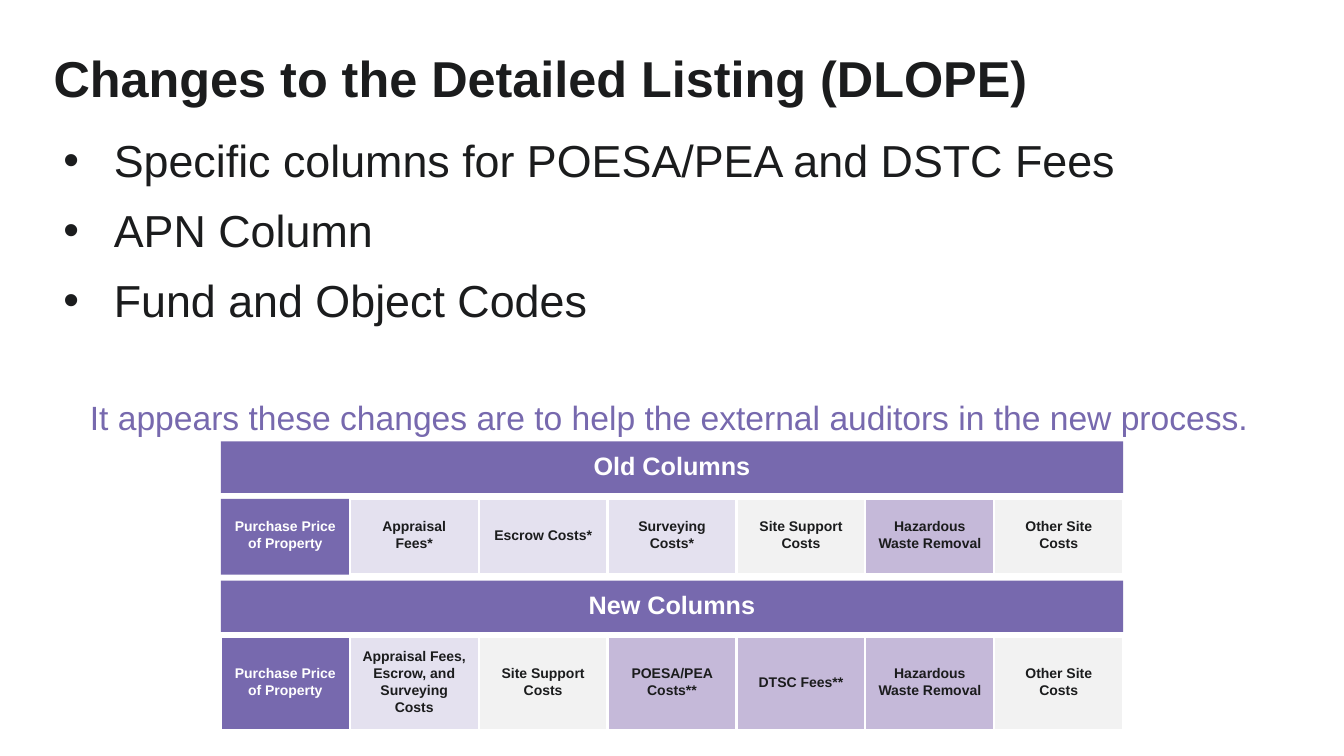
import dataclasses

import pptx
import pptx.dml.color
import pptx.enum.shapes
import pptx.enum.text
import pptx.oxml.ns
import pptx.util
from lxml import etree


@dataclasses.dataclass(frozen=True)
class Theme:
    font: str = "Arial"
    ink: str = "1B1C1D"
    white: str = "FFFFFF"
    purple: str = "7769AE"
    lilac: str = "C5B9D9"
    mist: str = "E4E1EF"
    grey: str = "F2F2F2"
    title_size: int = 36
    bullet_size: int = 32
    remark_size: int = 24
    band_size: int = 18
    cell_size: int = 10


THEME = Theme()
SLIDE_WIDTH = pptx.util.Inches(13.33)
SLIDE_HEIGHT = pptx.util.Inches(7.5)
MARGIN = 3.98
TABLE_LEFT = 16.43
TABLE_WIDTH = 67.14
CELL_INSET_SHARE = 0.1

BULLETS = [
    "Specific columns for POESA/PEA and DSTC Fees",
    "APN Column",
    "Fund and Object Codes",
]
REMARK = "It appears these changes are to help the external auditors in the new process."
OLD_COLUMNS = [
    ("Purchase Price of Property", THEME.purple),
    ("Appraisal Fees*", THEME.mist),
    ("Escrow Costs*", THEME.mist),
    ("Surveying Costs*", THEME.mist),
    ("Site Support Costs", THEME.grey),
    ("Hazardous Waste Removal", THEME.lilac),
    ("Other Site Costs", THEME.grey),
]
NEW_COLUMNS = [
    ("Purchase Price of Property", THEME.purple),
    ("Appraisal Fees, Escrow, and Surveying Costs", THEME.mist),
    ("Site Support Costs", THEME.grey),
    ("POESA/PEA Costs**", THEME.lilac),
    ("DTSC Fees**", THEME.lilac),
    ("Hazardous Waste Removal", THEME.lilac),
    ("Other Site Costs", THEME.grey),
]


def across(percent):
    return round(SLIDE_WIDTH * percent / 100)


def down(percent):
    return round(SLIDE_HEIGHT * percent / 100)


def area(left, top, width, height):
    return across(left), down(top), across(width), down(height)


def rgb(value):
    return pptx.dml.color.RGBColor.from_string(value)


def style(para, size, color, bold=False):
    para.font.name = THEME.font
    para.font.size = pptx.util.Pt(size)
    para.font.color.rgb = rgb(color)
    para.font.bold = bold


def add_bullet(para):
    indent = pptx.util.Inches(0.5)
    properties = para._p.get_or_add_pPr()
    properties.set("marL", str(indent))
    properties.set("indent", str(-indent))
    font = etree.SubElement(properties, pptx.oxml.ns.qn("a:buFont"))
    font.set("typeface", THEME.font)
    mark = etree.SubElement(properties, pptx.oxml.ns.qn("a:buChar"))
    mark.set("char", "•")


def add_text_frame(page, place):
    frame = page.shapes.add_textbox(*place).text_frame
    frame.word_wrap = True
    return frame


def add_title(page, text):
    frame = add_text_frame(page, area(MARGIN, 7.2, 83.87, 10.13))
    frame.margin_left = frame.margin_right = 0
    frame.margin_top = frame.margin_bottom = 0
    para = frame.paragraphs[0]
    para.text = text
    para.line_spacing = 0.9
    style(para, THEME.title_size, THEME.ink, bold=True)


def add_body(page, bullets, remark):
    frame = add_text_frame(page, area(MARGIN, 16.27, 91.6, 31.73))
    frame.margin_top = pptx.util.Inches(0.1)
    for index, text in enumerate(bullets):
        para = frame.add_paragraph() if index else frame.paragraphs[0]
        para.text = text
        add_bullet(para)
        if index:
            para.space_before = pptx.util.Pt(11.5)
        style(para, THEME.bullet_size, THEME.ink)
    para = frame.add_paragraph()
    para.text = remark
    para.alignment = pptx.enum.text.PP_ALIGN.CENTER
    para.space_before = pptx.util.Pt(50)
    style(para, THEME.remark_size, THEME.purple)


def add_block(page, place, text, fill, size, outlined):
    block = page.shapes.add_shape(pptx.enum.shapes.MSO_SHAPE.RECTANGLE, *place)
    block.shadow.inherit = False
    block.fill.solid()
    block.fill.fore_color.rgb = rgb(fill)
    if outlined:
        block.line.color.rgb = rgb(THEME.white)
        block.line.width = pptx.util.Pt(1.5)
    else:
        block.line.fill.background()
    frame = block.text_frame
    frame.word_wrap = True
    frame.vertical_anchor = pptx.enum.text.MSO_ANCHOR.MIDDLE
    frame.margin_top = 0
    frame.margin_bottom = pptx.util.Inches(0.04)
    para = frame.paragraphs[0]
    para.text = text
    para.alignment = pptx.enum.text.PP_ALIGN.CENTER
    color = THEME.white if fill == THEME.purple else THEME.ink
    style(para, size, color, bold=True)
    return frame


def add_band(page, top, text):
    place = area(TABLE_LEFT, top, TABLE_WIDTH, 6.8)
    add_block(page, place, text, THEME.purple, THEME.band_size, outlined=False)


def add_cells(page, top, height, columns, first_outlined):
    width = TABLE_WIDTH / len(columns)
    for index, (text, fill) in enumerate(columns):
        place = area(TABLE_LEFT + index * width, top, width, height)
        outlined = index > 0 or first_outlined
        frame = add_block(page, place, text, fill, THEME.cell_size, outlined)
        frame.margin_left = frame.margin_right = across(width * CELL_INSET_SHARE)


def main():
    deck = pptx.Presentation()
    deck.slide_width = SLIDE_WIDTH
    deck.slide_height = SLIDE_HEIGHT
    page = deck.slides.add_slide(deck.slide_layouts[6])
    add_title(page, "Changes to the Detailed Listing (DLOPE)")
    add_body(page, BULLETS, REMARK)
    add_band(page, 58.4, "Old Columns")
    add_cells(page, 66, 10, OLD_COLUMNS, first_outlined=False)
    add_band(page, 76.8, "New Columns")
    add_cells(page, 84.27, 12.27, NEW_COLUMNS, first_outlined=True)
    deck.save("out.pptx")


if __name__ == "__main__":
    main()
